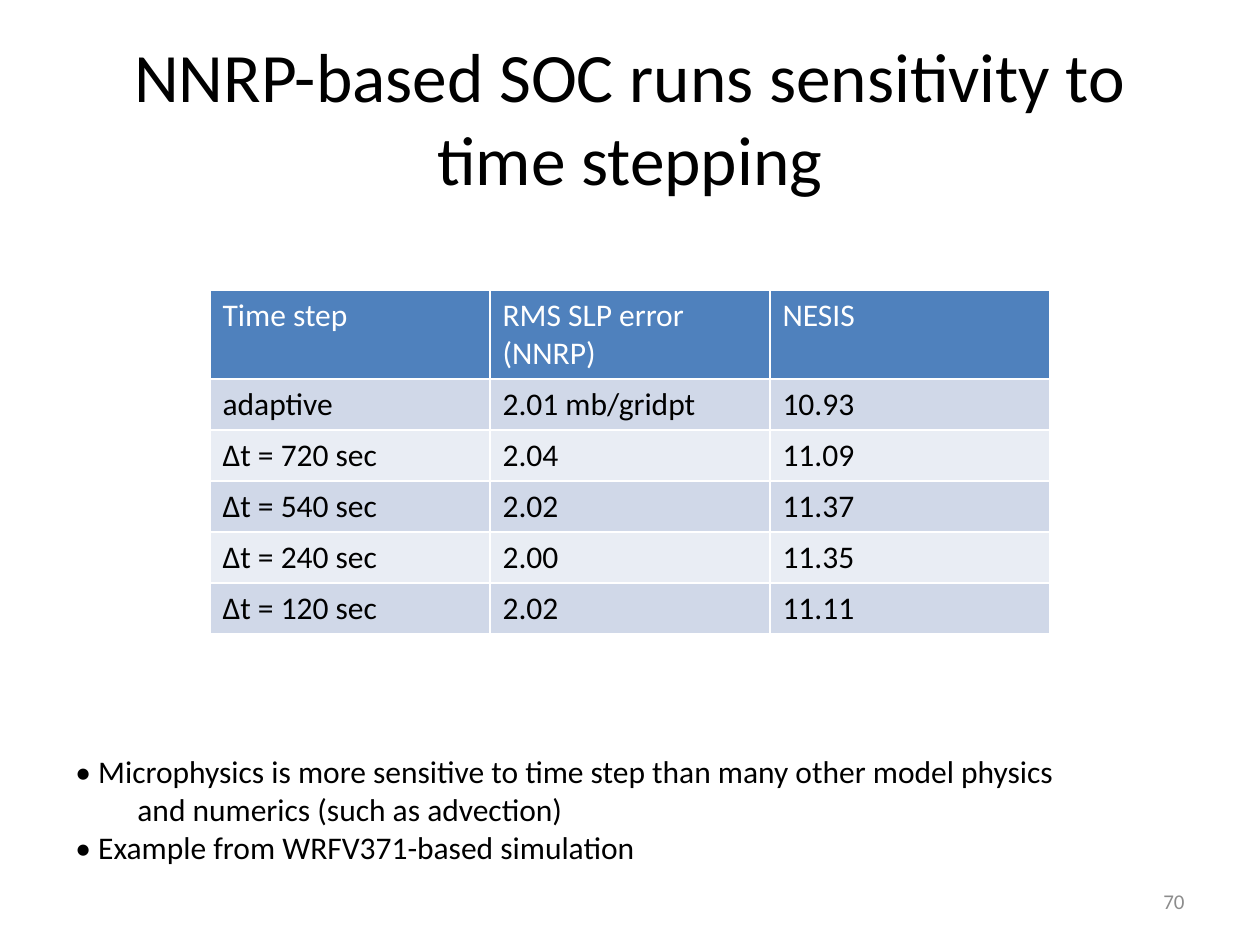
from lxml import etree
from pptx import Presentation
from pptx import util as u
from pptx.dml.color import RGBColor
from pptx.enum import text
from pptx.oxml import ns

PX = u.Inches(1) // 126
BLACK = RGBColor(0x00, 0x00, 0x00)
WHITE = RGBColor(0xFF, 0xFF, 0xFF)
GRAY = RGBColor(0x8C, 0x8C, 0x8C)
BLUE = RGBColor(0x4F, 0x81, 0xBD)
BANDS = [RGBColor(0xE9, 0xED, 0xF4), RGBColor(0xD0, 0xD8, 0xE8)]
LEFT, CENTER, RIGHT = text.PP_ALIGN.LEFT, text.PP_ALIGN.CENTER, text.PP_ALIGN.RIGHT


def add_run(p, words, size, color):
    r = p.add_run()
    r.text = words
    r.font.name = "Calibri"
    r.font.size = u.Pt(size)
    r.font.color.rgb = color


def add_text(box, lines, size, color, align, anchor, wrap=True):
    tf = s.shapes.add_textbox(*[n * PX for n in box]).text_frame
    tf.word_wrap = wrap
    tf.vertical_anchor = anchor
    for i, line in enumerate(lines):
        p = tf.add_paragraph() if i else tf.paragraphs[0]
        p.alignment = align
        add_run(p, line, size, color)
    return tf


prs = Presentation()
prs.slide_width, prs.slide_height = 1260 * PX, 945 * PX
s = prs.slides.add_slide(prs.slide_layouts[6])

# Title and slide number
add_text((63, 38, 1134, 157), ["NNRP-based SOC runs sensitivity to time stepping"],
         39.6, BLACK, CENTER, text.MSO_ANCHOR.MIDDLE)
add_text((903, 876, 294, 50), ["70"], 12, GRAY, RIGHT, text.MSO_ANCHOR.MIDDLE)

# Time step table
rows = [
    ("Time step", "RMS SLP error (NNRP)", "NESIS"),
    ("adaptive", "2.01 mb/gridpt", "10.93"),
    ("∆t = 720 sec", "2.04", "11.09"),
    ("∆t = 540 sec", "2.02", "11.37"),
    ("∆t = 240 sec", "2.00", "11.35"),
    ("∆t = 120 sec", "2.02", "11.11"),
]
table = s.shapes.add_table(len(rows), 3, 210 * PX, 290 * PX, 840 * PX, 344 * PX).table
for column in table.columns:
    column.width = 280 * PX
for i, row in enumerate(rows):
    table.rows[i].height = (51 if i else 89) * PX
    for j, words in enumerate(row):
        cell = table.cell(i, j)
        p = cell.text_frame.paragraphs[0]
        add_run(p, words, 18, BLACK if i else WHITE)
        p.runs[0].font.bold = False
        # White borders go before the fill in the cell properties
        tcPr = cell._tc.get_or_add_tcPr()
        for side in ("lnL", "lnR", "lnT", "lnB"):
            ln = etree.SubElement(tcPr, ns.qn("a:" + side), w=str(u.Pt(1)))
            fill = etree.SubElement(ln, ns.qn("a:solidFill"))
            etree.SubElement(fill, ns.qn("a:srgbClr"), val=str(WHITE))
        cell.fill.solid()
        cell.fill.fore_color.rgb = BANDS[i % 2] if i else BLUE

# Notes on the results
tf = add_text((63, 746, 1018, 127), [
    "• Microphysics is more sensitive to time step than many other model physics",
    "and numerics (such as advection)",
    "• Example from WRFV371-based simulation",
], 18, BLACK, LEFT, text.MSO_ANCHOR.TOP, wrap=False)
tf.paragraphs[1]._p.get_or_add_pPr().set("marL", str(62 * PX))

prs.save("out.pptx")
